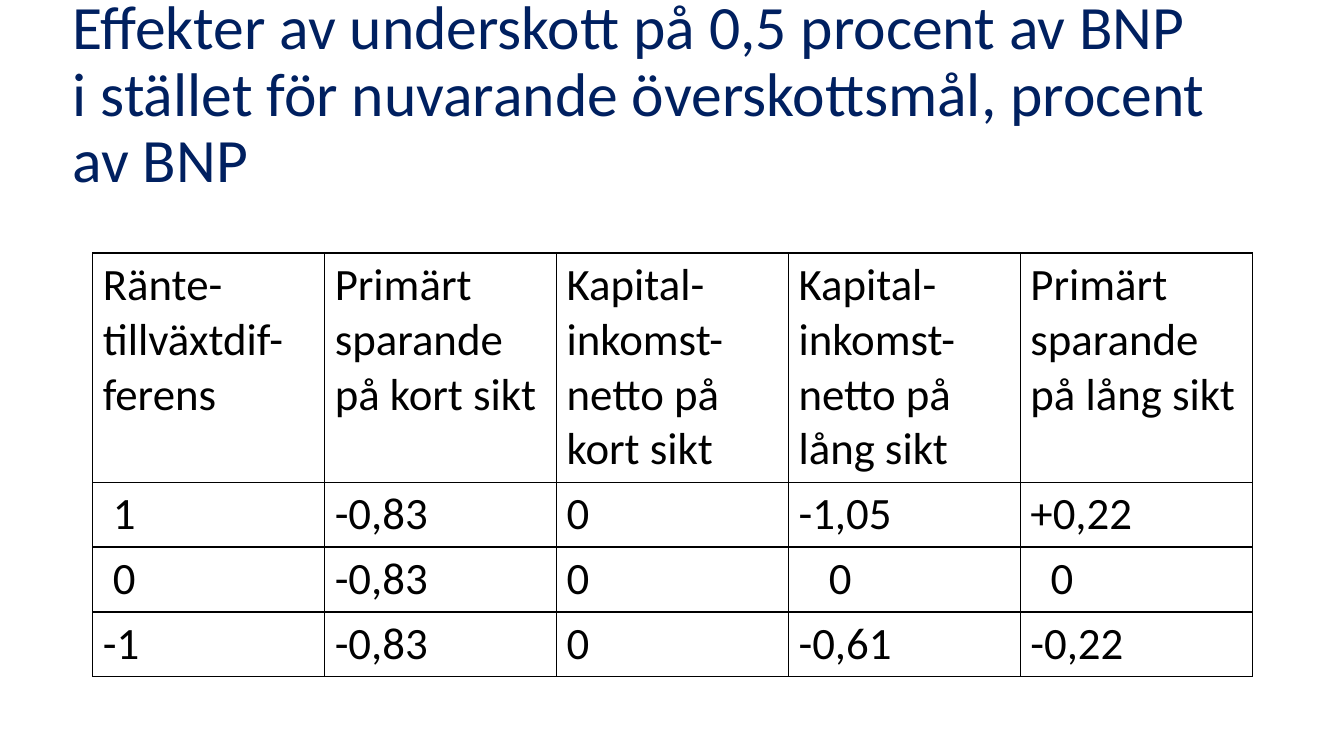
from dataclasses import dataclass

from lxml import etree
from pptx import Presentation
from pptx.dml.color import RGBColor
from pptx.enum import text as t
from pptx.oxml import ns
from pptx.util import Inches, Pt

FONT = "Calibri"
NAVY = "002060"
BLACK = "000000"
COLUMN_WIDTH = 2.3
HEADER_HEIGHT = 2.27
ROW_HEIGHT = 0.64
CELL_MARGIN = 0.1


@dataclass(frozen=True)
class Entry:
    text: str
    indent: float = 0


ROWS = [
    [
        Entry("Ränte-tillväxtdif-ferens"),
        Entry("Primärt sparande på kort sikt"),
        Entry("Kapital-inkomst-netto på kort sikt"),
        Entry("Kapital-inkomst-netto på lång sikt"),
        Entry("Primärt sparande på lång sikt"),
    ],
    [Entry("1", 0.1), Entry("-0,83"), Entry("0"), Entry("-1,05"), Entry("+0,22")],
    [Entry("0", 0.1), Entry("-0,83"), Entry("0"), Entry("0", 0.3), Entry("0", 0.2)],
    [Entry("-1"), Entry("-0,83"), Entry("0"), Entry("-0,61"), Entry("-0,22")],
]


def color(value: str) -> RGBColor:
    return RGBColor.from_string(value)


def write(frame, text: str, *, size: float, fill: str, spacing: float = 1.0) -> None:
    para = frame.paragraphs[0]
    para.alignment = t.PP_ALIGN.LEFT
    para.line_spacing = spacing
    span = para.add_run()
    span.text = text
    span.font.name = FONT
    span.font.size = Pt(size)
    span.font.bold = False
    span.font.color.rgb = color(fill)


def add_borders(cell, line_color: str, width: float) -> None:
    """Draw all four cell edges; they must precede the cell's fill in the XML."""
    properties = cell._tc.get_or_add_tcPr()
    for position, edge in enumerate(("lnL", "lnR", "lnT", "lnB")):
        line = etree.Element(ns.qn(f"a:{edge}"), w=str(Pt(width)))
        solid = etree.SubElement(line, ns.qn("a:solidFill"))
        etree.SubElement(solid, ns.qn("a:srgbClr"), val=line_color)
        properties.insert(position, line)


def add_title(page) -> None:
    title = page.shapes.title
    title.left, title.top = Inches(0.62), Inches(0.23)
    title.width, title.height = Inches(11.5), Inches(1.45)
    frame = title.text_frame
    frame.word_wrap = True
    frame.auto_size = t.MSO_AUTO_SIZE.NONE
    frame.vertical_anchor = t.MSO_ANCHOR.MIDDLE
    write(
        frame,
        "Effekter av underskott på 0,5 procent av BNP "
        "i stället för nuvarande överskottsmål, procent av BNP",
        size=44,
        fill=NAVY,
        spacing=0.9,
    )


def add_effects_table(page) -> None:
    heights = [HEADER_HEIGHT] + [ROW_HEIGHT] * (len(ROWS) - 1)
    column_count = len(ROWS[0])
    table = page.shapes.add_table(
        len(ROWS), column_count, Inches(0.92), Inches(2.51),
        Inches(COLUMN_WIDTH * column_count), Inches(sum(heights)),
    ).table
    table.first_row = False
    table.horz_banding = False
    for column in table.columns:
        column.width = Inches(COLUMN_WIDTH)
    for row, height, entries in zip(table.rows, heights, ROWS):
        row.height = Inches(height)
        for cell, entry in zip(row.cells, entries):
            cell.fill.background()
            cell.margin_left = Inches(CELL_MARGIN + entry.indent)
            add_borders(cell, BLACK, 1)
            write(cell.text_frame, entry.text, size=32, fill=BLACK)


def main() -> None:
    deck = Presentation()
    deck.slide_width, deck.slide_height = Inches(13.33), Inches(7.5)
    page = deck.slides.add_slide(deck.slide_layouts.get_by_name("Title Only"))
    add_title(page)
    add_effects_table(page)
    deck.save("out.pptx")


if __name__ == "__main__":
    main()
